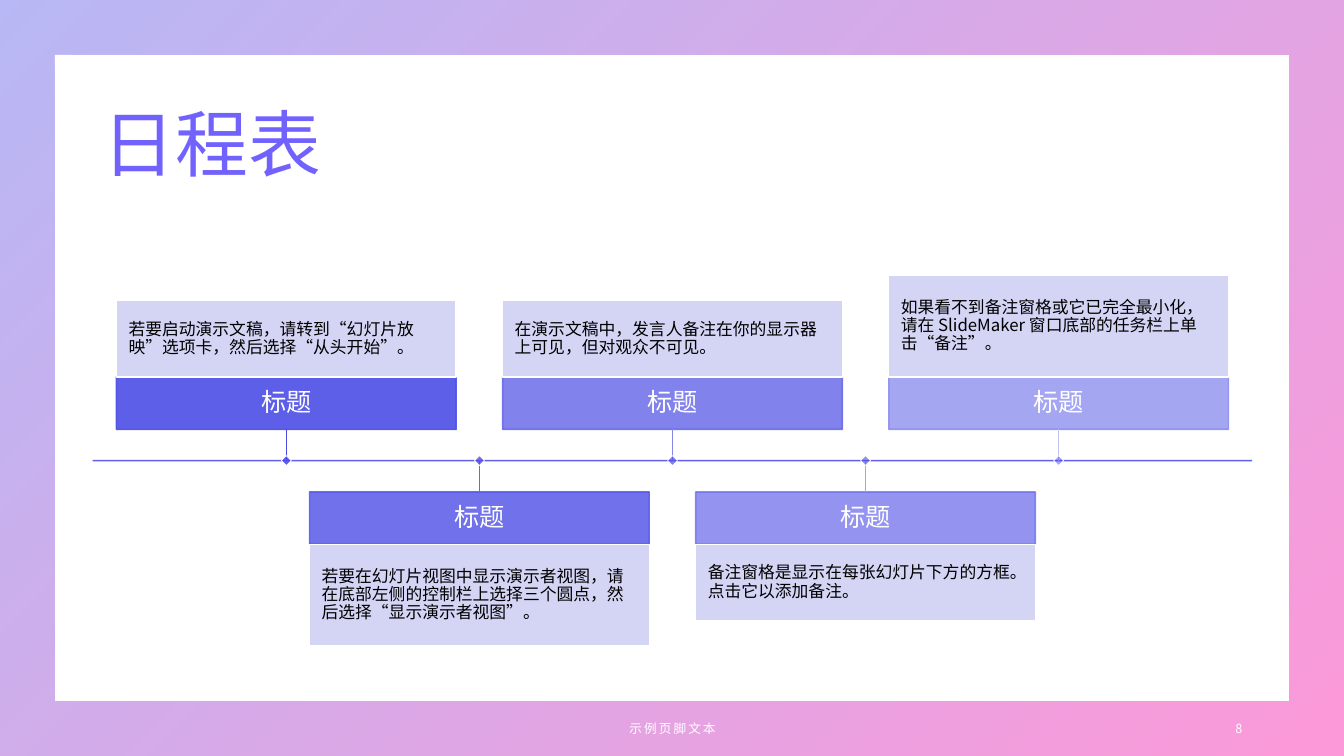
from lxml import etree
from pptx import Presentation
from pptx.dml.color import RGBColor
from pptx.enum.shapes import MSO_CONNECTOR, MSO_SHAPE
from pptx.enum.text import MSO_ANCHOR, PP_ALIGN
from pptx.oxml.ns import qn
from pptx.util import Inches, Pt

RECT = MSO_SHAPE.RECTANGLE
FRAME = MSO_SHAPE.FRAME
STRAIGHT = MSO_CONNECTOR.STRAIGHT
MIDDLE = MSO_ANCHOR.MIDDLE
LEFT, CENTER, RIGHT = PP_ALIGN.LEFT, PP_ALIGN.CENTER, PP_ALIGN.RIGHT


def color(value):
    return RGBColor.from_string(value)


def fade(element, percent):
    for tint in element.iter(qn("a:srgbClr")):
        etree.SubElement(tint, qn("a:alpha")).set("val", str(percent * 1000))


class TimelineSlide:
    FONT = "Noto Sans CJK SC"
    ACCENT = "4D4EE6"
    PINK = "F900A0"
    TITLE = "7162FE"
    PALE = "D0D0F5"
    WHITE = "FFFFFF"
    BLACK = "000000"

    def __init__(self, slide):
        self.shapes = slide.shapes

    def label(self, shape, text, size, ink, align=LEFT, inset=None,
              line_spacing=None, space_after=0, tracking=0):
        frame = shape.text_frame
        frame.text = text
        frame.word_wrap = True
        frame.vertical_anchor = MIDDLE
        if inset is not None:
            frame.margin_left = frame.margin_right = Inches(inset)
            frame.margin_top = frame.margin_bottom = Inches(inset)
        paragraph = frame.paragraphs[0]
        paragraph.alignment = align
        paragraph.line_spacing = line_spacing
        paragraph.space_after = Pt(space_after)
        for run in paragraph.runs:
            run.font.size = Pt(size)
            run.font.name = self.FONT
            run.font.color.rgb = color(ink)
            properties = run.font._element
            etree.SubElement(properties, qn("a:ea")).set("typeface", self.FONT)
            if tracking:
                properties.set("spc", str(round(tracking * 100)))

    def text(self, left, top, width, height, text, size, ink, **style):
        box = self.shapes.add_textbox(
            Inches(left), Inches(top), Inches(width), Inches(height))
        self.label(box, text, size, ink, **style)

    def box(self, left, top, width, height, fill, opacity, outline, weight,
            outline_opacity=100):
        shape = self.shapes.add_shape(
            RECT, Inches(left), Inches(top), Inches(width), Inches(height))
        shape.shadow.inherit = False
        shape.fill.solid()
        shape.fill.fore_color.rgb = color(fill)
        fade(shape._element.spPr, opacity)
        shape.line.color.rgb = color(outline)
        shape.line.width = Pt(weight)
        if outline_opacity < 100:
            fade(shape._element.spPr.find(qn("a:ln")), outline_opacity)
        return shape

    def line(self, x1, y1, x2, y2, ink, weight, opacity=100):
        line = self.shapes.add_connector(
            STRAIGHT, Inches(x1), Inches(y1), Inches(x2), Inches(y2))
        line.line.color.rgb = color(ink)
        line.line.width = Pt(weight)
        properties = line._element.spPr
        if opacity < 100:
            fade(properties, opacity)
        etree.SubElement(properties, qn("a:effectLst"))

    def border(self, width, height):
        border = self.shapes.add_shape(FRAME, 0, 0, width, height)
        border.adjustments[0] = 0.072
        border.shadow.inherit = False
        border.line.fill.background()
        border.fill.gradient()
        border.fill.gradient_angle = 315
        for stop, tint in zip(border.fill.gradient_stops, (self.ACCENT, self.PINK)):
            stop.color.rgb = color(tint)
        fade(border._element.spPr, 40)

    def diamond(self, x, y, opacity):
        side = 0.07
        marker = self.box(x - side / 2, y - side / 2, side, side,
                          self.ACCENT, opacity, self.WHITE, 0.5)
        marker.rotation = 45

    def event(self, x, axis, above, detail, detail_height, opacity, stem):
        width, heading_height, stem_height = 3.37, 0.52, 0.31
        left = x - width / 2
        if above:
            stem_end = axis - stem_height
            heading_top = stem_end - heading_height
            detail_top = heading_top - detail_height
        else:
            stem_end = axis + stem_height
            heading_top = stem_end
            detail_top = heading_top + heading_height
        heading = self.box(left, heading_top, width, heading_height, self.ACCENT,
                           opacity, self.ACCENT, 1, opacity)
        self.label(heading, "标题", 18, self.WHITE, align=CENTER, inset=0.1,
                   line_spacing=0.9, space_after=6.3)
        description = self.box(left, detail_top, width, detail_height,
                               self.PALE, 90, self.WHITE, 1)
        self.label(description, detail, 12, self.BLACK, inset=0.12,
                   line_spacing=0.9, space_after=4.2)
        self.line(x, axis, x, stem_end, stem, 0.5)
        self.diamond(x, axis, opacity)


EVENTS = [
    ("若要启动演示文稿，请转到“幻灯片放映”选项卡，然后选择“从头开始”。", 0.76, "4A4BDC"),
    ("若要在幻灯片视图中显示演示者视图，请在底部左侧的控制栏上选择三个圆点，然后选择“显示演示者视图”。", 1.01, "6868E2"),
    ("在演示文稿中，发言人备注在你的显示器上可见，但对观众不可见。", 0.76, "8686E7"),
    ("备注窗格是显示在每张幻灯片下方的方框。点击它以添加备注。", 0.76, "A4A4ED"),
    ("如果看不到备注窗格或它已完全最小化，请在 SlideMaker 窗口底部的任务栏上单击“备注”。", 1.01, "C2C2F3"),
]


def main():
    deck = Presentation()
    deck.slide_width = Inches(13.33)
    deck.slide_height = Inches(7.5)
    page = TimelineSlide(deck.slides.add_slide(deck.slide_layouts[6]))
    page.border(deck.slide_width, deck.slide_height)
    page.text(0.92, 0.74, 11.5, 1.45, "日程表", 52, page.TITLE, line_spacing=0.9)

    axis = 4.57
    first_x, step = 2.84, 1.915
    page.line(0.92, axis, 12.42, axis, page.ACCENT, 1, 90)
    for index, (detail, height, stem) in enumerate(EVENTS):
        page.event(first_x + index * step, axis, index % 2 == 0, detail, height,
                   90 - 10 * index, stem)

    page.text(4.42, 7.03, 4.5, 0.4, "示例页脚文本", 9, page.WHITE,
              align=CENTER, tracking=1.5)
    page.text(9.42, 7.03, 3, 0.4, "8", 9, page.WHITE, align=RIGHT, tracking=1.5)
    deck.save("out.pptx")


if __name__ == "__main__":
    main()
